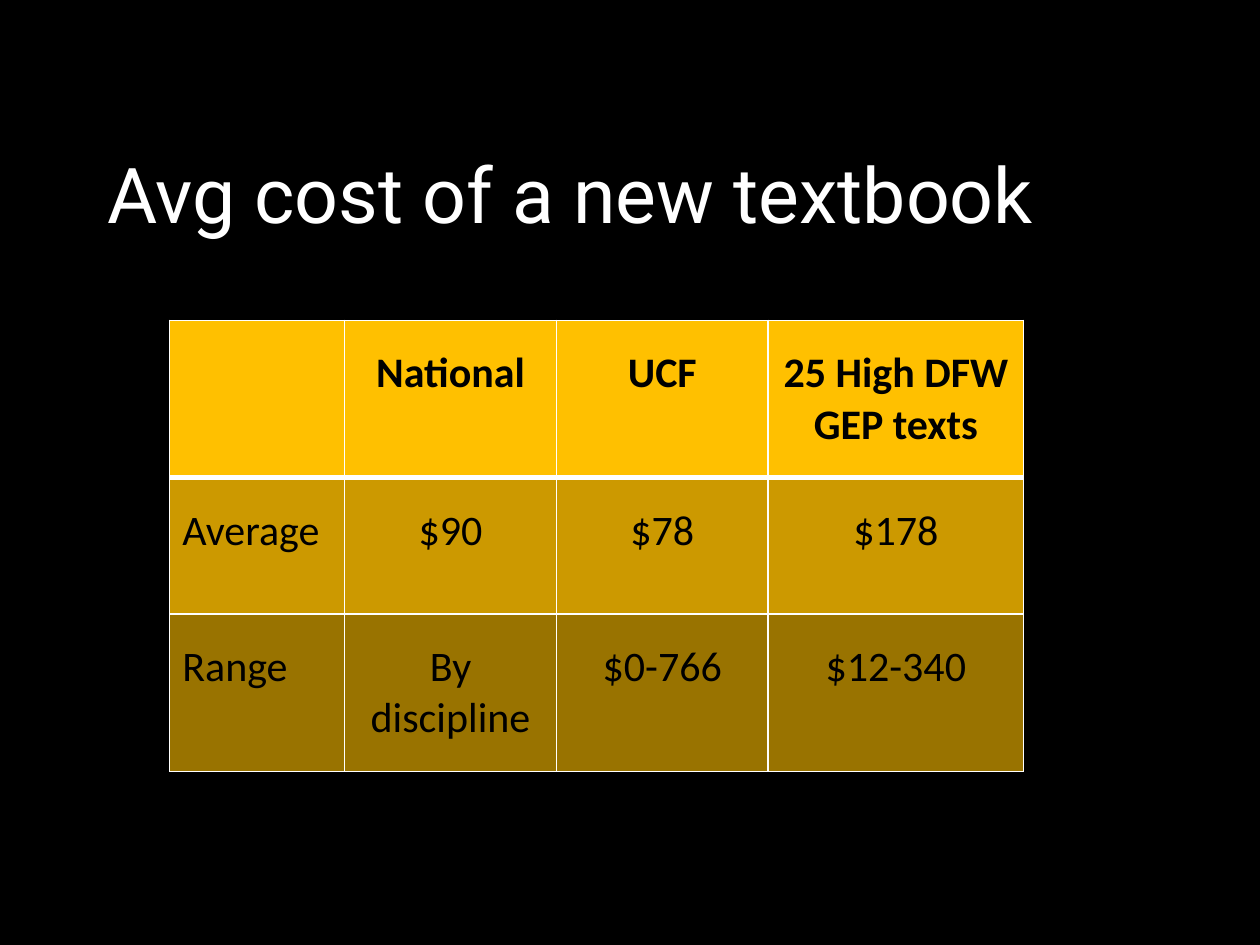
from lxml.etree import SubElement
from pptx import Presentation
from pptx.dml.color import RGBColor as RGB
from pptx.enum.text import MSO_ANCHOR as Anchor, PP_ALIGN as Align
from pptx.oxml import parse_xml
from pptx.oxml.ns import nsdecls, qn
from pptx.util import Pt

# Content
TITLE = "Avg cost of a new textbook"
ROWS = [
    ("", "National", "UCF", "25 High DFW GEP texts"),
    ("Average", "$90", "$78", "$178"),
    ("Range", "By discipline", "$0-766", "$12-340"),
]

# Layout, in points
TITLE_BOX = (54, 61, 630, 104.5)
TABLE_AT = (97, 183)
WIDTHS = (100, 121, 121, 146)
HEIGHTS = (90, 78, 90)
TOP_PAD = 15.8

THEME = {
    "back": "000000", "title": "FFFFFF", "text": "000000",
    "gold": "FFC000", "line": "FFFFFF",
    "alphas": (100, 80, 60),
    "head_font": "Roboto", "body_font": "Calibri",
    "head_size": 44, "body_size": 24,
    "thin": 1, "thick": 3,
}


def style(para, font, size, color, bold=False):
    para.font.name = font
    para.font.size = Pt(size)
    para.font.color.rgb = RGB.from_string(color)
    para.font.bold = bold


def border(cell, row):
    """Draw all four edges, with a thick rule under the header."""
    props = cell._tc.get_or_add_tcPr()
    for i, side in enumerate("LRTB"):
        heavy = (row, side) in ((0, "B"), (1, "T"))
        width = Pt(THEME["thick" if heavy else "thin"])
        props.insert(i, parse_xml(
            f'<a:ln{side} {nsdecls("a")} w="{width}"><a:solidFill>'
            f'<a:srgbClr val="{THEME["line"]}"/></a:solidFill></a:ln{side}>'))


def paint(cell, alpha):
    cell.fill.solid()
    cell.fill.fore_color.rgb = RGB.from_string(THEME["gold"])
    if alpha < 100:
        color = cell._tc.tcPr.find(qn("a:solidFill"))[0]
        SubElement(color, qn("a:alpha"), val=str(alpha * 1000))


# Slide
deck = Presentation()
deck.slide_width, deck.slide_height = Pt(720), Pt(540)
slide = deck.slides.add_slide(deck.slide_layouts[5])
slide.background.fill.solid()
slide.background.fill.fore_color.rgb = RGB.from_string(THEME["back"])

# Title
title = slide.shapes.title
title.left, title.top, title.width, title.height = map(Pt, TITLE_BOX)
title.text_frame.text = TITLE
title.text_frame.vertical_anchor = Anchor.MIDDLE
para = title.text_frame.paragraphs[0]
para.alignment = Align.LEFT
para.line_spacing = 0.9
style(para, THEME["head_font"], THEME["head_size"], THEME["title"])

# Table
size = (sum(WIDTHS), sum(HEIGHTS))
table = slide.shapes.add_table(
    len(ROWS), len(WIDTHS), *map(Pt, TABLE_AT + size)).table
for col, width in zip(table.columns, WIDTHS):
    col.width = Pt(width)
for r, texts in enumerate(ROWS):
    table.rows[r].height = Pt(HEIGHTS[r])
    for c, text in enumerate(texts):
        cell = table.cell(r, c)
        cell.text = text
        cell.margin_top = Pt(TOP_PAD)
        para = cell.text_frame.paragraphs[0]
        para.alignment = Align.CENTER if c else Align.LEFT
        style(para, THEME["body_font"], THEME["body_size"],
              THEME["text"], bold=r == 0)
        paint(cell, THEME["alphas"][r])
        border(cell, r)

deck.save("out.pptx")
